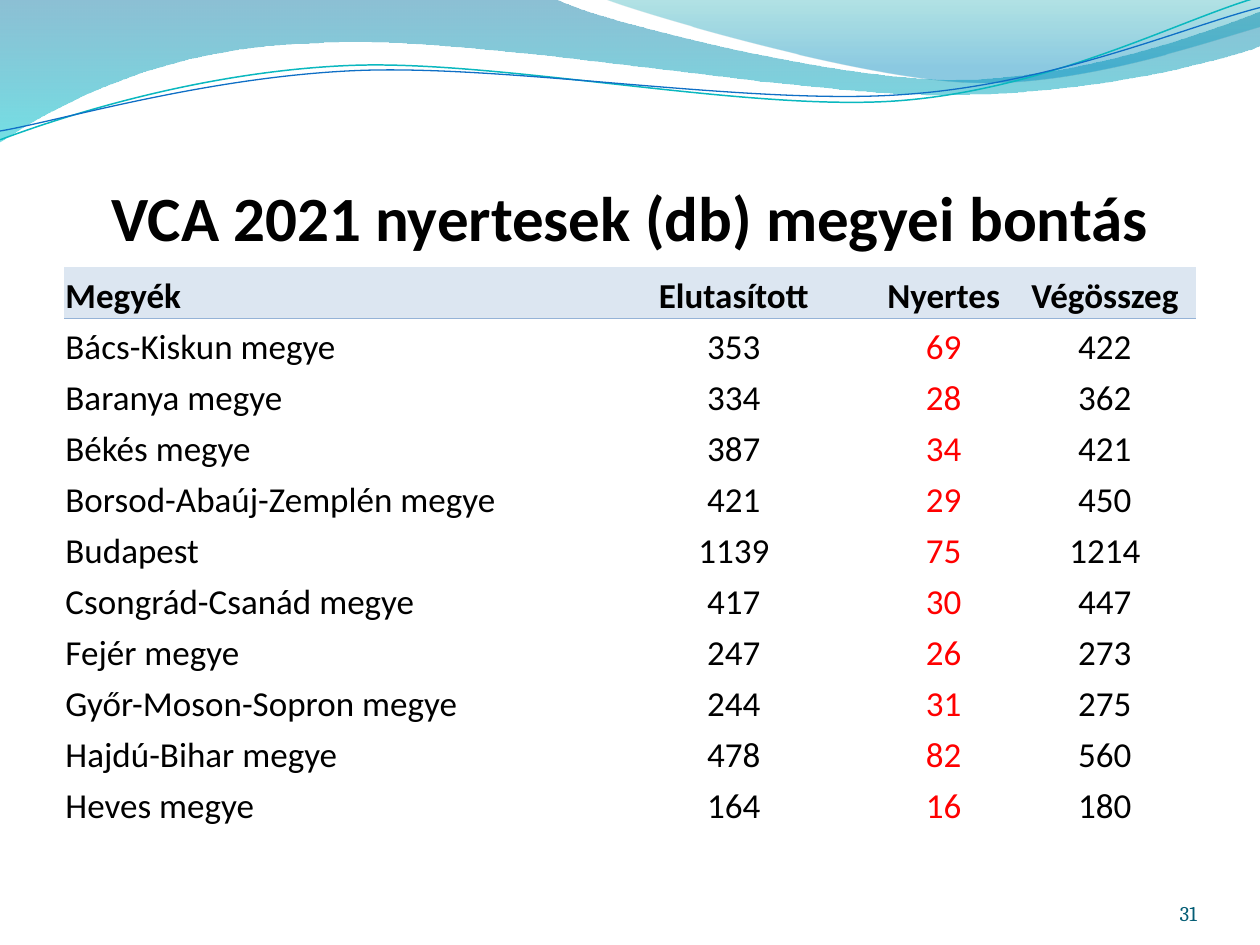
from math import cos, radians, sin

from lxml.etree import SubElement
from pptx import Presentation
from pptx.dml.color import RGBColor
from pptx.enum.text import MSO_ANCHOR, MSO_AUTO_SIZE, PP_ALIGN
from pptx.oxml.ns import qn
from pptx.util import Inches, Pt

theme = dict(
    font="Calibri", serif="Cambria", ink="000000", win="FF0000", page="045D75",
    head="DCE6F1", rule="95B3D7", title=36, cell=20, small=12,
)


def write(box, text, size=theme["cell"], font=theme["font"], color=theme["ink"],
          bold=False, align=PP_ALIGN.CENTER):
    """Put one formatted line of text into a frame."""
    para = box.paragraphs[0]
    para.alignment = align
    run = para.add_run()
    run.text = text
    run.font.size, run.font.name, run.font.bold = Pt(size), font, bold
    run.font.color.rgb = RGBColor.from_string(color)


def trace(slide, start, parts, closed, turn=0, hub=(0, 0)):
    """Draw an outline; a part of six numbers is a Bézier curve, of two a line.

    The points are turned back about the hub, and the shape is turned by as much.
    """
    c, s = cos(radians(-turn)), sin(radians(-turn))
    paths = []
    for part in [start, *parts]:
        flat = [(x - hub[0], y - hub[1]) for x, y in zip(part[::2], part[1::2])]
        paths.append([(Inches(hub[0] + x * c - y * s), Inches(hub[1] + x * s + y * c))
                      for x, y in flat])
    pen = slide.shapes.build_freeform(*paths[0][0])
    pen.add_line_segments([path[-1] for path in paths[1:]], close=closed)
    shape = pen.convert_to_shape()
    # Bend the straight segments that have control points
    for node, path in zip(list(shape.element.iter(qn("a:lnTo"))), paths[1:]):
        if len(path) == 3:
            node.tag = qn("a:cubicBezTo")
            for i, (x, y) in enumerate(path[:2]):
                dot = SubElement(node, qn("a:pt"), x=str(x - shape.left), y=str(y - shape.top))
                node.insert(i, dot)
    shape.rotation = turn
    shape.shadow.inherit = False
    return shape


deck = Presentation()
deck.slide_width, deck.slide_height = Inches(10), Inches(7.5)
wide = deck.slide_width
slide = deck.slides.add_slide(deck.slide_layouts[5])

# Filled waves: start, parts, gradient stops (position, colour, opacity %)
waves = [
    ((0, 0), [(4.4, -0.01), (4.76, 0.17, 6.64, 0.63, 7.58, 0.63),
              (8.53, 0.63, 9.58, 0.26, 10, 0.09), (10.01, 0.36),
              (9.83, 0.44, 8.7, 0.76, 7.46, 0.75), (6.22, 0.75, 3.82, 0.28, 2.57, 0.34),
              (1.29, 0.36, 0.46, 0.83, -0.01, 1.13), (0, 0)],
     [(0, "0074A1", 45), (1, "00C6CF", 55)]),
    ((4.79, -0.01), [(5.09, 0.11, 6.82, 0.62, 7.69, 0.65),
                     (8.56, 0.69, 9.61, 0.32, 10, 0.21), (10, 0), (4.79, -0.01)],
     [(0, "00A1A9", 30), (0.8, "008BBF", 45)]),
]
for start, parts, stops in waves:
    wave = trace(slide, start, parts, True)
    wave.line.fill.background()
    wave.fill.gradient()
    wave.fill.gradient_angle = 270
    for stop, (place, color, _) in zip(wave.fill.gradient_stops, stops):
        stop.position = place
        stop.color.rgb = RGBColor.from_string(color)
    for node, (_, _, alpha) in zip(wave.element.iter(qn("a:gs")), stops):
        SubElement(node[0], qn("a:alpha"), val=str(alpha * 1000))

# Thin wave lines, tilted a little
lines = [
    ((0, 1.11), [(0.48, 0.93, 1.58, 0.57, 2.77, 0.52), (3.95, 0.47, 5.93, 0.89, 7.13, 0.8),
                 (8.33, 0.71, 9.38, 0.15, 9.98, -0.02)], "0AB8BF", 0.85),
    ((0, 1.04), [(0.47, 0.96, 1.64, 0.61, 2.83, 0.56), (4.03, 0.51, 5.97, 0.84, 7.17, 0.75),
                 (8.36, 0.67, 9.41, 0.21, 10, 0.06)], "0F6FC6", 0.75),
]
for start, parts, color, width in lines:
    curve = trace(slide, start, parts, False, turn=357.3, hub=(4.99, 0.58))
    curve.fill.background()
    curve.line.color.rgb = RGBColor.from_string(color)
    curve.line.width = Pt(width)

# Title
title = slide.shapes.title
title.left, title.top = int(wide * 0.05), Inches(0.77)
title.width, title.height = int(wide * 0.9), Inches(1.25)
frame = title.text_frame
frame.auto_size, frame.word_wrap = MSO_AUTO_SIZE.NONE, True
frame.vertical_anchor = MSO_ANCHOR.BOTTOM
frame.margin_left = frame.margin_right = frame.margin_bottom = 0
write(frame, "VCA 2021 nyertesek (db) megyei bontás", size=theme["title"], bold=True)

# Table of counties
rows = [
    ("Megyék", "Elutasított", "Nyertes", "Végösszeg"),
    ("Bács-Kiskun megye", 353, 69, 422),
    ("Baranya megye", 334, 28, 362),
    ("Békés megye", 387, 34, 421),
    ("Borsod-Abaúj-Zemplén megye", 421, 29, 450),
    ("Budapest", 1139, 75, 1214),
    ("Csongrád-Csanád megye", 417, 30, 447),
    ("Fejér megye", 247, 26, 273),
    ("Győr-Moson-Sopron megye", 244, 31, 275),
    ("Hajdú-Bihar megye", 478, 82, 560),
    ("Heves megye", 164, 16, 180),
]
cols = [4.21, 2.21, 1.12, 1.44]
holder = slide.shapes.add_table(len(rows), len(cols), Inches(0.51), Inches(2.12),
                                Inches(sum(cols)), Inches(4.45))
table = holder.table
table.first_row = table.horz_banding = False
for node in holder.element.iter(qn("a:tableStyleId")):
    node.text = "{2D5ABB26-0587-4C30-8999-92F81FD0307C}"  # no style, no grid
for c, width in enumerate(cols):
    table.columns[c].width = Inches(width)

for r, row in enumerate(rows):
    for c, value in enumerate(row):
        cell = table.cell(r, c)
        cell.vertical_anchor = MSO_ANCHOR.BOTTOM
        cell.margin_left = cell.margin_right = cell.margin_top = Inches(0.01)
        cell.margin_bottom = 0
        write(cell.text_frame, str(value), bold=r == 0,
              color=theme["win"] if r and c == 2 else theme["ink"],
              align=PP_ALIGN.CENTER if c else PP_ALIGN.LEFT)
        # Borders: only a rule between the head and the body
        props = cell._tc.get_or_add_tcPr()
        for side in ("lnL", "lnR", "lnT", "lnB"):
            edge = SubElement(props, qn(f"a:{side}"), w=str(Pt(0.5)))
            if (r, side) in ((0, "lnB"), (1, "lnT")):
                paint = SubElement(edge, qn("a:solidFill"))
                SubElement(paint, qn("a:srgbClr"), val=theme["rule"])
            else:
                SubElement(edge, qn("a:noFill"))
        if r == 0:
            cell.fill.solid()
            cell.fill.fore_color.rgb = RGBColor.from_string(theme["head"])
        else:
            cell.fill.background()

# Page number
page = slide.shapes.add_textbox(Inches(8.67), Inches(6.95), Inches(0.83), Inches(0.4)).text_frame
page.word_wrap = True
page.vertical_anchor = MSO_ANCHOR.BOTTOM
page.margin_left = page.margin_right = page.margin_top = page.margin_bottom = 0
write(page, "31", size=theme["small"], font=theme["serif"], color=theme["page"],
      align=PP_ALIGN.RIGHT)

deck.save("out.pptx")
